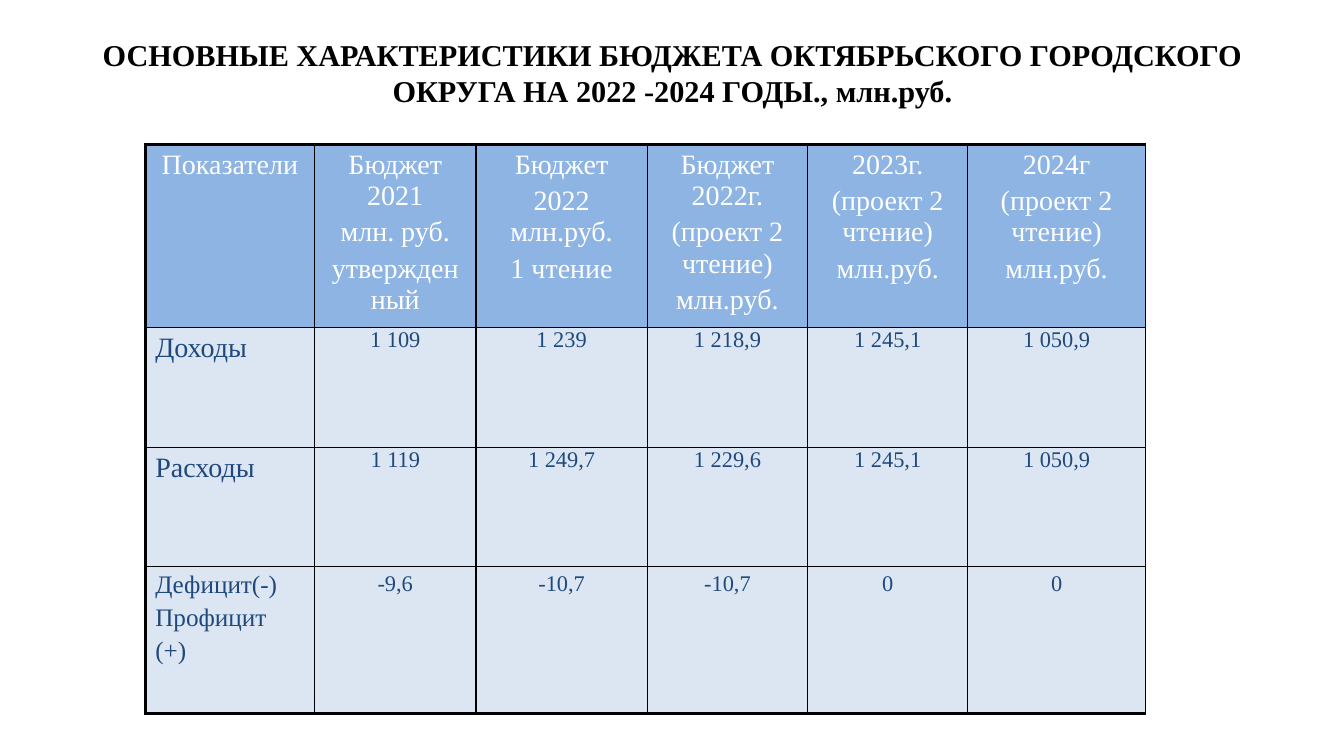
from dataclasses import dataclass

from lxml.etree import SubElement
from pptx import Presentation
from pptx.dml.color import RGBColor
from pptx.enum.text import MSO_ANCHOR, MSO_AUTO_SIZE, PP_ALIGN
from pptx.oxml.ns import qn
from pptx.slide import Slide
from pptx.table import Table, _Cell
from pptx.text.text import TextFrame
from pptx.util import Inches, Pt

BLACK = RGBColor(0x00, 0x00, 0x00)
WHITE = RGBColor(0xFF, 0xFF, 0xFF)
NAVY = RGBColor(0x1F, 0x49, 0x7D)
HEADER_BLUE = RGBColor(0x8E, 0xB4, 0xE3)
PALE_BLUE = RGBColor(0xDC, 0xE6, 0xF2)
FONT = "Times New Roman"

# Grid of the table, in inches
TABLE_LEFT, TABLE_TOP = 1.44, 1.43
COLUMNS = (1.68, 1.6, 1.7, 1.59, 1.59, 1.76)
ROWS = (1.82, 1.19, 1.18, 1.46)
THIN, THICK = 1, 2.25

TITLE = ("ОСНОВНЫЕ ХАРАКТЕРИСТИКИ БЮДЖЕТА ОКТЯБРЬСКОГО ГОРОДСКОГО "
         "ОКРУГА НА 2022 -2024 ГОДЫ., млн.руб.")


@dataclass(frozen=True)
class TextStyle:
    size: float
    color: RGBColor
    align: PP_ALIGN = PP_ALIGN.CENTER
    bold: bool = False
    spaced: bool = True  # one fifth of the size before each paragraph


@dataclass(frozen=True)
class BudgetRow:
    label: str
    values: tuple[str, ...]
    label_style: TextStyle
    value_style: TextStyle
    fill: RGBColor = PALE_BLUE


TITLE_STYLE = TextStyle(21.6, BLACK, bold=True, spaced=False)
HEADER = TextStyle(20, WHITE)
LABEL = TextStyle(20, NAVY, PP_ALIGN.LEFT)
SMALL_LABEL = TextStyle(18, NAVY, PP_ALIGN.LEFT)
TIGHT_VALUE = TextStyle(16, NAVY, spaced=False)
VALUE = TextStyle(16, NAVY)

BUDGET = (
    BudgetRow("Показатели", (
        "Бюджет 2021\nмлн. руб.\nутвержденный",
        "Бюджет\n2022 млн.руб.\n1 чтение",
        "Бюджет 2022г.\n(проект 2 чтение)\nмлн.руб.",
        "2023г.\n(проект 2 чтение)\nмлн.руб.",
        "2024г\n(проект 2 чтение)\nмлн.руб.",
    ), HEADER, HEADER, HEADER_BLUE),
    BudgetRow("Доходы", ("1 109", "1 239", "1 218,9", "1 245,1", "1 050,9"),
              LABEL, TIGHT_VALUE),
    BudgetRow("Расходы", ("1 119", "1 249,7", "1 229,6", "1 245,1", "1 050,9"),
              LABEL, TIGHT_VALUE),
    BudgetRow("Дефицит(-)\nПрофицит\n(+)", ("-9,6", "-10,7", "-10,7", "0", "0"),
              SMALL_LABEL, VALUE),
)


def write(frame: TextFrame, text: str, style: TextStyle) -> None:
    """Fill a text frame, one paragraph for each line of the text."""
    frame.text = text
    font_format = {"name": FONT, "size": Pt(style.size), "bold": style.bold}
    for para in frame.paragraphs:
        para.alignment = style.align
        para.space_before = Pt(style.size / 5 if style.spaced else 0)
        for span in para.runs:
            for name, value in font_format.items():
                setattr(span.font, name, value)
            span.font.color.rgb = style.color


def draw_borders(cell: _Cell, widths: dict[str, float]) -> None:
    properties = cell._tc.get_or_add_tcPr()
    for side, width in widths.items():
        line = SubElement(properties, qn(f"a:ln{side}"), w=str(Pt(width)))
        fill = SubElement(line, qn("a:solidFill"))
        SubElement(fill, qn("a:srgbClr"), val=str(BLACK))


def draw_cell(table: Table, row: int, column: int) -> None:
    entry = BUDGET[row]
    cell = table.cell(row, column)
    text = (entry.label, *entry.values)[column]
    style = entry.value_style if column else entry.label_style
    write(cell.text_frame, text, style)

    side, edge = (0.1, 0.05) if style.spaced else (0.07, 0)
    cell_format = {
        "margin_left": Inches(side), "margin_right": Inches(side),
        "margin_top": Inches(edge), "margin_bottom": Inches(edge),
        "vertical_anchor": MSO_ANCHOR.TOP,
    }
    for name, value in cell_format.items():
        setattr(cell, name, value)

    # The outer edge is thick, except on the right
    draw_borders(cell, {
        "L": THICK if column == 0 else THIN,
        "R": THIN,
        "T": THICK if row == 0 else THIN,
        "B": THICK if row == len(ROWS) - 1 else THIN,
    })
    cell.fill.solid()
    cell.fill.fore_color.rgb = entry.fill


def draw_title(page: Slide) -> None:
    box = page.shapes.title
    place = {"left": 0.67, "top": 0.3, "width": 12, "height": 0.83}
    for name, value in place.items():
        setattr(box, name, Inches(value))
    frame = box.text_frame
    frame_format = {"word_wrap": True, "auto_size": MSO_AUTO_SIZE.NONE,
                    "vertical_anchor": MSO_ANCHOR.MIDDLE}
    for name, value in frame_format.items():
        setattr(frame, name, value)
    write(frame, TITLE, TITLE_STYLE)


def draw_table(page: Slide) -> None:
    table = page.shapes.add_table(
        len(ROWS), len(COLUMNS), Inches(TABLE_LEFT), Inches(TABLE_TOP),
        Inches(sum(COLUMNS)), Inches(sum(ROWS))).table
    table.horz_banding = False
    for column, width in zip(table.columns, COLUMNS):
        column.width = Inches(width)
    for row, height in zip(table.rows, ROWS):
        row.height = Inches(height)
    for row in range(len(ROWS)):
        for column in range(len(COLUMNS)):
            draw_cell(table, row, column)


def main() -> None:
    deck = Presentation()
    deck.slide_width, deck.slide_height = Inches(13.33), Inches(7.5)
    page = deck.slides.add_slide(deck.slide_layouts[5])
    draw_title(page)
    draw_table(page)
    deck.save("out.pptx")


if __name__ == "__main__":
    main()
